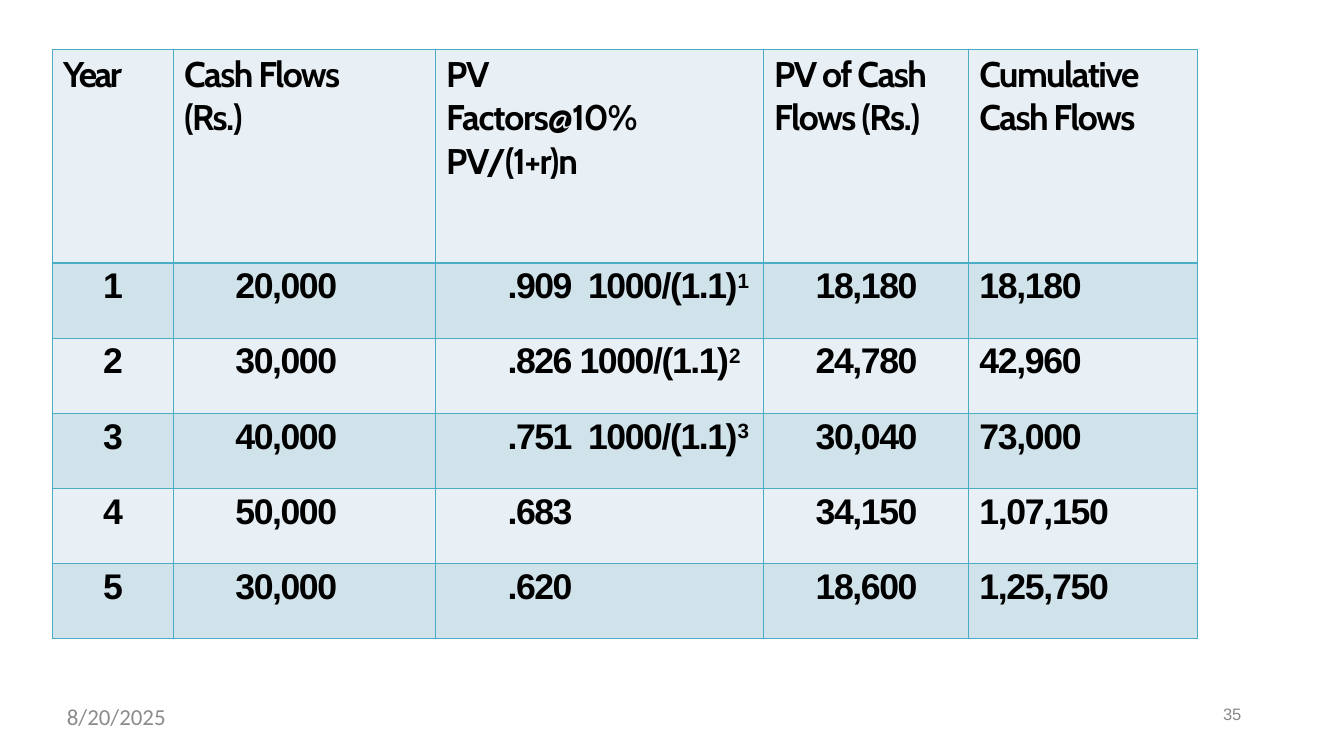
"""Build the present value table slide."""
from dataclasses import dataclass

import pptx
import pptx.dml.color
import pptx.enum.text
import pptx.oxml
import pptx.oxml.ns
import pptx.slide
import pptx.table
import pptx.text.text
import pptx.util
from pptx.util import Inches

COLORS = {
    "text": "000000",
    "border": "4AACC5",
    "light": "E9F0F5",
    "dark": "D0E2EA",
    "number": "888888",
    "date": "8C8C8C",
}
HEADER_HEIGHT, ROW_HEIGHT = 2.33, 0.82
LEFT = pptx.enum.text.PP_ALIGN.LEFT
CENTER = pptx.enum.text.PP_ALIGN.CENTER


@dataclass
class Column:
    width: float
    header: str
    header_spacing: float
    values: list[str]
    indent: float
    spacing: float
    alignment: pptx.enum.text.PP_ALIGN = LEFT


@dataclass
class Footer:
    left: float
    top: float
    width: float
    height: float
    text: str
    font: str
    size: float
    color: str
    indent: float = 0
    spacing: float = 0
    line_points: float | None = None


COLUMNS = [
    Column(1.32, "Year", -2, ["1", "2", "3", "4", "5"], 0.01, 0, CENTER),
    Column(2.86, "Cash Flows\n(Rs.)", -1.25,
           ["20,000", "30,000", "40,000", "50,000", "30,000"], 0.68, -1.1),
    Column(3.58, "PV\nFactors@10%\nPV/(1+r)n", -1,
           [".909  1000/(1.1)^1", ".826 1000/(1.1)^2", ".751  1000/(1.1)^3", ".683", ".620"],
           0.79, -1.1),
    Column(2.24, "PV of Cash\nFlows (Rs.)", -1.2,
           ["18,180", "24,780", "30,040", "34,150", "18,600"], 0.02, -1.1, CENTER),
    Column(2.5, "Cumulative\nCash Flows", -1.25,
           ["18,180", "42,960", "73,000", "1,07,150", "1,25,750"], 0.12, -1),
]
FOOTERS = [
    Footer(13.22, 7.69, 0.34, 0.42, "35", "Arial", 13, "number", 0.13, -0.1, 15.3),
    Footer(0.73, 7.67, 3.37, 0.3, "8/20/2025", "Calibri", 18, "date"),
]


def set_indent(paragraph: pptx.text.text._Paragraph, indent: float) -> None:
    properties = paragraph._p.get_or_add_pPr()
    properties.set("marL", str(Inches(indent)))
    properties.set("indent", "0")


def format_run(run: pptx.text.text._Run, font: str, size: float, color: str,
               spacing: float, bold: bool = False) -> None:
    run.font.name = font
    run.font.size = pptx.util.Pt(size)
    run.font.bold = bold
    run.font.color.rgb = pptx.dml.color.RGBColor.from_string(COLORS[color])
    run._r.get_or_add_rPr().set("spc", str(round(spacing * 100)))


def style_cell(cell: pptx.table._Cell, fill: str) -> None:
    cell.margin_left = cell.margin_right = cell.margin_bottom = 0
    cell.margin_top = Inches(0.04)
    properties = cell._tc.get_or_add_tcPr()
    for side in ("lnL", "lnR", "lnT", "lnB"):
        properties.append(pptx.oxml.parse_xml(
            f'<a:{side} {pptx.oxml.ns.nsdecls("a")} w="12700"><a:solidFill>'
            f'<a:srgbClr val="{COLORS["border"]}"/></a:solidFill></a:{side}>'))
    cell.fill.solid()
    cell.fill.fore_color.rgb = pptx.dml.color.RGBColor.from_string(COLORS[fill])


def write_cell(cell: pptx.table._Cell, text: str, font: str, indent: float,
               spacing: float, alignment: pptx.enum.text.PP_ALIGN) -> None:
    cell.text_frame.text = text.replace("^", "")
    for paragraph, line in zip(cell.text_frame.paragraphs, text.split("\n")):
        set_indent(paragraph, indent)
        paragraph.alignment = alignment
        base, _, exponent = line.partition("^")
        paragraph.runs[0].text = base
        if exponent:
            run = paragraph.add_run()
            run.text = exponent
            run._r.get_or_add_rPr().set("baseline", "30000")
        for run in paragraph.runs:
            format_run(run, font, 28, "text", spacing, bold=True)
    cell.text_frame.paragraphs[0].space_before = pptx.util.Pt(2.6)


def add_cash_flow_table(slide: pptx.slide.Slide) -> None:
    row_count = len(COLUMNS[0].values) + 1
    width = sum(column.width for column in COLUMNS)
    height = HEADER_HEIGHT + ROW_HEIGHT * (row_count - 1)
    table = slide.shapes.add_table(
        row_count, len(COLUMNS), Inches(0.57), Inches(0.54), Inches(width), Inches(height)).table
    table.first_row = table.horz_banding = False
    for index, row in enumerate(table.rows):
        row.height = Inches(ROW_HEIGHT if index else HEADER_HEIGHT)
    for column_index, column in enumerate(COLUMNS):
        table.columns[column_index].width = Inches(column.width)
        for row_index, text in enumerate([column.header, *column.values]):
            cell = table.cell(row_index, column_index)
            style_cell(cell, "dark" if row_index % 2 else "light")
            if row_index:
                write_cell(cell, text, "Arial", column.indent, column.spacing, column.alignment)
            else:
                write_cell(cell, text, "Cabin", 0.12, column.header_spacing, LEFT)


def add_footer(slide: pptx.slide.Slide, footer: Footer) -> None:
    shape = slide.shapes.add_textbox(
        Inches(footer.left), Inches(footer.top), Inches(footer.width), Inches(footer.height))
    frame = shape.text_frame
    frame.word_wrap = True
    frame.auto_size = pptx.enum.text.MSO_AUTO_SIZE.SHAPE_TO_FIT_TEXT
    frame.margin_left = frame.margin_right = frame.margin_top = frame.margin_bottom = 0
    frame.text = footer.text
    paragraph = frame.paragraphs[0]
    set_indent(paragraph, footer.indent)
    if footer.line_points:
        paragraph.line_spacing = pptx.util.Pt(footer.line_points)
    format_run(paragraph.runs[0], footer.font, footer.size, footer.color, footer.spacing)


def main() -> None:
    presentation = pptx.Presentation()
    presentation.slide_width = Inches(14.67)
    presentation.slide_height = Inches(8.25)
    slide = presentation.slides.add_slide(presentation.slide_layouts[6])
    add_cash_flow_table(slide)
    for footer in FOOTERS:
        add_footer(slide, footer)
    presentation.save("out.pptx")


if __name__ == "__main__":
    main()
